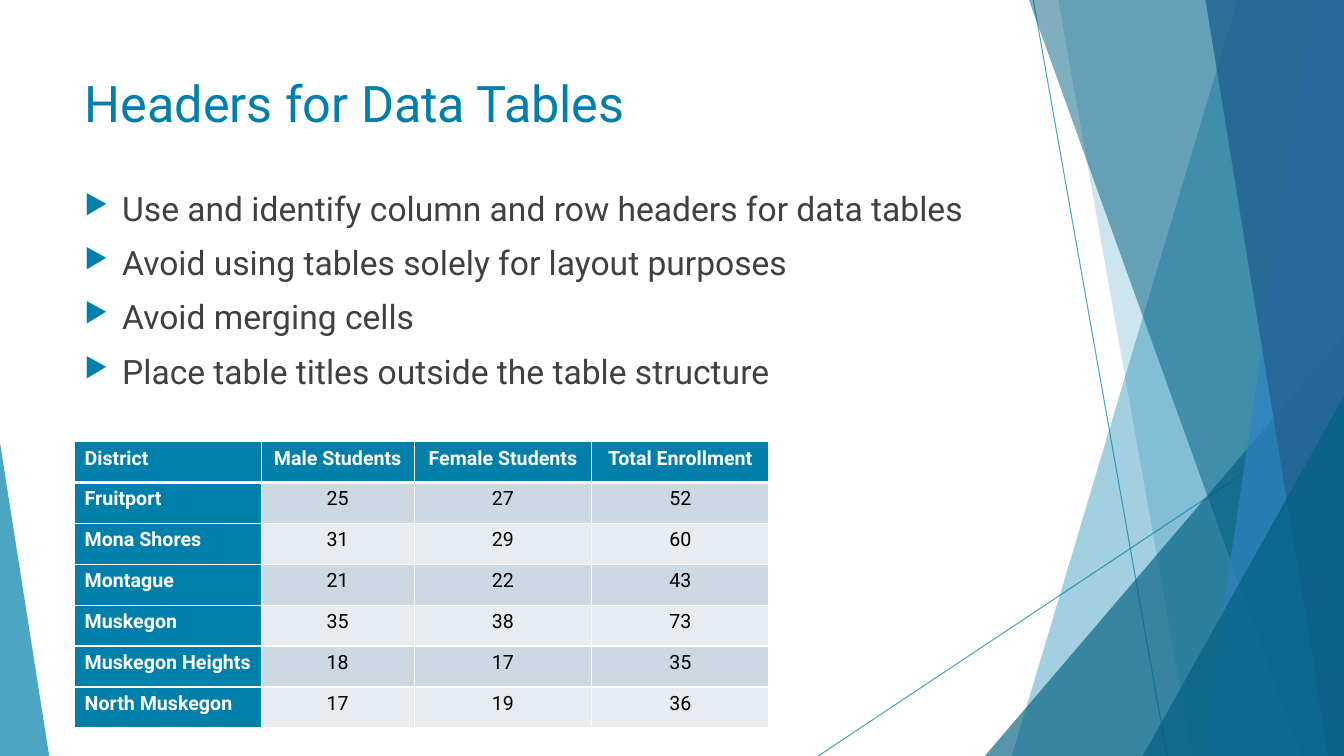
from lxml.etree import SubElement
from pptx import Presentation
from pptx.dml.color import RGBColor
from pptx.enum.shapes import MSO_CONNECTOR as Connector, MSO_SHAPE as Preset
from pptx.enum.text import MSO_ANCHOR as Anchor, PP_ALIGN as Align
from pptx.oxml.ns import qn
from pptx.util import Cm, Pt

COLORS = {
    "teal": "007FAA", "deep": "005F80", "blue": "2E83C3", "navy": "226292",
    "text": "404040", "black": "000000", "white": "FFFFFF",
    "band_dark": "CCD8E2", "band_light": "E7ECF1",
}
FONT = "Roboto"
WIDTH, HEIGHT = 33.87, 19.05
LEFT = 1.88

BULLETS = [
    "Use and identify column and row headers for data tables",
    "Avoid using tables solely for layout purposes",
    "Avoid merging cells",
    "Place table titles outside the table structure",
]
ENROLLMENT = [
    ("District", "Male Students", "Female Students", "Total Enrollment"),
    ("Fruitport", 25, 27, 52),
    ("Mona Shores", 31, 29, 60),
    ("Montague", 21, 22, 43),
    ("Muskegon", 35, 38, 73),
    ("Muskegon Heights", 18, 17, 35),
    ("North Muskegon", 17, 19, 36),
]


def write(para, text, size, color, bold=False, align=Align.LEFT):
    """Add formatted text to a paragraph."""
    para.alignment = align
    span = para.add_run()
    span.text = text
    span.font.name = FONT
    span.font.size = Pt(size)
    span.font.bold = bold
    span.font.color.rgb = RGBColor.from_string(COLORS[color])


class SlideBuilder:
    """Draw styled elements on the current slide."""

    def __init__(self, page):
        """Keep the slide to draw on."""
        self.page = page
        self.shapes = page.shapes

    def paint(self, fill, color, alpha):
        """Apply a solid, partly transparent color to a fill."""
        fill.solid()
        fill.fore_color.rgb = RGBColor.from_string(COLORS[color])
        tint = next(fill._xPr.iter(qn("a:srgbClr")))
        SubElement(tint, qn("a:alpha"), val=str(alpha * 1000))

    def finish(self, shape, color, alpha):
        """Fill a shape and remove its outline and shadow."""
        shape.shadow.inherit = False
        shape.line.fill.background()
        self.paint(shape.fill, color, alpha)

    def line(self, x1, y1, x2, y2):
        """Draw a thin decorative line."""
        line = self.shapes.add_connector(
            Connector.STRAIGHT, Cm(x1), Cm(y1), Cm(x2), Cm(y2))
        line.line.width = Pt(0.75)
        self.paint(line.line.fill, "teal", 70)
        SubElement(line._element.spPr, qn("a:effectLst"))

    def facet(self, top_x, bottom_x, color, alpha):
        """Draw a full-height facet that ends at the right edge."""
        builder = self.shapes.build_freeform(Cm(top_x), Cm(0))
        builder.add_line_segments(
            [(Cm(x), Cm(y)) for x, y in
             ((WIDTH, 0), (WIDTH, HEIGHT), (bottom_x, HEIGHT))])
        self.finish(builder.convert_to_shape(), color, alpha)

    def triangle(self, left, top, width, apex, color, alpha):
        """Draw a triangle that stands on the bottom edge."""
        shape = self.shapes.add_shape(
            Preset.ISOSCELES_TRIANGLE,
            Cm(left), Cm(top), Cm(width), Cm(HEIGHT - top))
        shape.adjustments[0] = apex
        self.finish(shape, color, alpha)

    def title(self, text, left, top, width, height):
        """Place and format the title placeholder."""
        box = self.shapes.title
        box.left, box.top, box.width, box.height = map(
            Cm, (left, top, width, height))
        box.text_frame.vertical_anchor = Anchor.TOP
        box.text_frame.word_wrap = True
        write(box.text_frame.paragraphs[0], text, 36, "teal")

    def bullets(self, items, left, top, width, height):
        """Add a bulleted list."""
        box = self.shapes.add_textbox(Cm(left), Cm(top), Cm(width), Cm(height))
        frame = box.text_frame
        frame.word_wrap = True
        for index, item in enumerate(items):
            para = frame.add_paragraph() if index else frame.paragraphs[0]
            para.space_before = Pt(10 if index else 0)
            props = para._p.get_or_add_pPr()
            props.set("marL", str(Cm(0.95)))
            props.set("indent", str(-Cm(0.95)))
            tint = SubElement(props, qn("a:buClr"))
            SubElement(tint, qn("a:srgbClr"), val=COLORS["teal"])
            SubElement(props, qn("a:buSzPct"), val="80000")
            SubElement(props, qn("a:buChar"), char="▶")
            write(para, item, 24, "text")

    def borders(self, cell, top, bottom):
        """Add white borders to a table cell."""
        props = cell._tc.get_or_add_tcPr()
        for side, points in zip("LRTB", (1, 1, top, bottom)):
            edge = SubElement(props, qn(f"a:ln{side}"), w=str(Pt(points)))
            fill = SubElement(edge, qn("a:solidFill"))
            SubElement(fill, qn("a:srgbClr"), val=COLORS["white"])

    def table(self, records, left, top, widths, row_height):
        """Add a banded table with header row and header column."""
        table = self.shapes.add_table(
            len(records), len(widths), Cm(left), Cm(top),
            Cm(sum(widths)), Cm(row_height * len(records))).table
        table.first_col = True
        for column, width in zip(table.columns, widths):
            column.width = Cm(width)
        for r, record in enumerate(records):
            table.rows[r].height = Cm(row_height)
            band = "band_dark" if r % 2 else "band_light"
            for c, value in enumerate(record):
                cell = table.cell(r, c)
                header = r == 0 or c == 0
                self.borders(cell, 3 if r == 1 else 1, 3 if r == 0 else 1)
                cell.fill.solid()
                cell.fill.fore_color.rgb = RGBColor.from_string(
                    COLORS["teal" if header else band])
                write(cell.text_frame.paragraphs[0], str(value), 14,
                      "white" if header else "black", bold=header,
                      align=Align.CENTER if c else Align.LEFT)


def main():
    """Build and save the deck."""
    deck = Presentation()
    deck.slide_width, deck.slide_height = Cm(WIDTH), Cm(HEIGHT)
    slide = SlideBuilder(deck.slides.add_slide(deck.slide_layouts[5]))
    slide.line(26.04, 0, 29.41, HEIGHT)
    slide.line(WIDTH, 10.24, 20.62, HEIGHT)
    slide.facet(31.19, 25.5, "teal", 36)
    slide.facet(26.67, 30.05, "teal", 20)
    slide.triangle(24.82, 8.46, 9.05, 1, "deep", 66)
    slide.facet(25.93, 32.79, "deep", 50)
    slide.facet(33.1, 30.28, "blue", 70)
    slide.facet(30.38, 33.48, "navy", 80)
    slide.triangle(28.8, 9.98, 5.07, 1, "deep", 66)
    slide.triangle(0, 11.15, 1.24, 0, "teal", 70)
    slide.title("Headers for Data Tables", LEFT, 1.7, 23.88, 3.66)
    slide.bullets(BULLETS, LEFT, 4.6, 23.32, 5.41)
    slide.table(ENROLLMENT, LEFT, 11.13, (4.7, 3.86, 4.47, 4.47), 1.03)
    deck.save("out.pptx")


if __name__ == "__main__":
    main()
